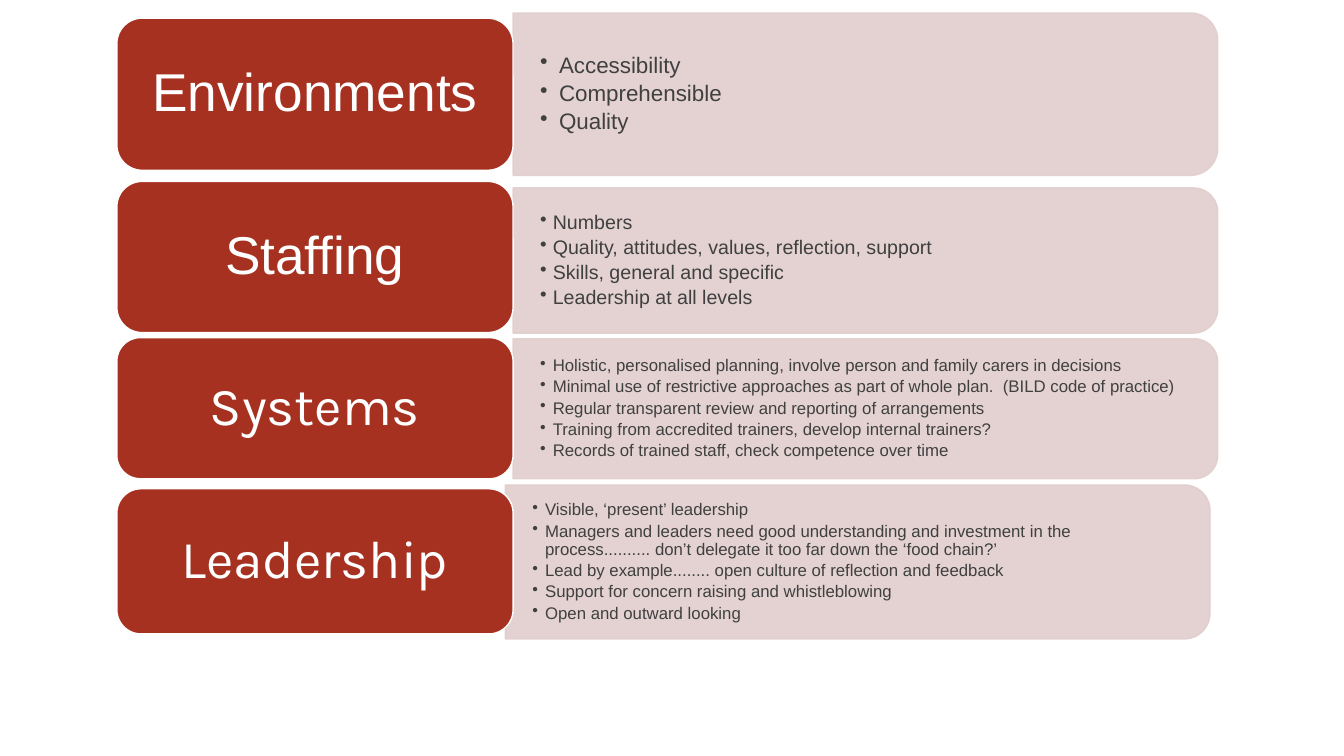
from lxml.etree import SubElement
from pptx import Presentation
from pptx.dml.color import RGBColor
from pptx.enum.shapes import MSO_SHAPE
from pptx.enum.text import MSO_ANCHOR, PP_ALIGN
from pptx.oxml.ns import qn
from pptx.util import Pt

COLOURS = {"label": "A63121", "panel": "E1CECD", "body": "404040", "white": "FFFFFF"}
LABEL_LEFT, LABEL_WIDTH = 83.5, 283
PANEL_WIDTH, TEXT_WIDTH = 503.3, 498

# Each row: label and panel as (centre, height), then the text settings
rows = [
    {"title": "Environments", "title_font": "Arial", "label": (67.3, 108.7),
     "panel": (67.3, 116), "left": 366.5, "size": 16, "indent": 13.5,
     "items": ["Accessibility", "Comprehensible", "Quality"]},
    {"title": "Staffing", "title_font": "Arial", "label": (183.6, 108),
     "panel": (186.1, 103.7), "left": 366.5, "size": 14, "indent": 9,
     "items": ["Numbers",
               "Quality, attitudes, values, reflection, support",
               "Skills, general and specific",
               "Leadership at all levels"]},
    {"title": "Systems", "title_font": "Karla", "label": (291.6, 100.8),
     "panel": (292, 100), "left": 366.5, "size": 12, "indent": 9,
     "items": ["Holistic, personalised planning, involve person and family carers in decisions",
               "Minimal use of restrictive approaches as part of whole plan.  (BILD code of practice)",
               "Regular transparent review and reporting of arrangements",
               "Training from accredited trainers, develop internal trainers?",
               "Records of trained staff, check competence over time"]},
    {"title": "Leadership", "title_font": "Karla", "label": (401, 103.7),
     "panel": (401.4, 110), "left": 361, "size": 12, "indent": 9,
     "items": ["Visible, ‘present’ leadership",
               "Managers and leaders need good understanding and investment in the "
               "process.......... don’t delegate it too far down the ‘food chain?’",
               "Lead by example........ open culture of reflection and feedback",
               "Support for concern raising and whistleblowing",
               "Open and outward looking"]},
]


def paint(shape, fill, line):
    shape.shadow.inherit = False
    shape.fill.solid()
    shape.fill.fore_color.rgb = RGBColor.from_string(COLOURS[fill])
    shape.line.color.rgb = RGBColor.from_string(COLOURS[line])
    shape.line.width = Pt(1)


def write(frame, texts, margins, font, size, colour):
    across, down = margins
    frame_format = {"word_wrap": True, "vertical_anchor": MSO_ANCHOR.MIDDLE,
                    "margin_left": Pt(across), "margin_right": Pt(across),
                    "margin_top": Pt(down), "margin_bottom": Pt(down)}
    for name, value in frame_format.items():
        setattr(frame, name, value)
    for number, text in enumerate(texts):
        para = frame.add_paragraph() if number else frame.paragraphs[0]
        para.line_spacing = 0.9
        span = para.add_run()
        span.text = text
        for name, value in {"name": font, "size": Pt(size)}.items():
            setattr(span.font, name, value)
        span.font.color.rgb = RGBColor.from_string(COLOURS[colour])


deck = Presentation()
deck.slide_width, deck.slide_height = Pt(960), Pt(540)
page = deck.slides.add_slide(deck.slide_layouts[6])

for row in rows:
    # Panel: turned a quarter so that its round corners face right
    centre, height = row["panel"]
    panel = page.shapes.add_shape(
        MSO_SHAPE.ROUND_2_SAME_RECTANGLE,
        Pt(row["left"] + (PANEL_WIDTH - height) / 2), Pt(centre - PANEL_WIDTH / 2),
        Pt(height), Pt(PANEL_WIDTH))
    panel.rotation = 90
    paint(panel, "panel", "panel")
    for tint in panel.element.spPr.iter(qn("a:srgbClr")):
        SubElement(tint, qn("a:alpha"), val="90000")

    # Bulleted list over the panel
    box = page.shapes.add_textbox(Pt(row["left"]), Pt(centre - height / 2),
                                  Pt(TEXT_WIDTH), Pt(height))
    write(box.text_frame, row["items"], (19.4, 10), "Arial", row["size"], "body")
    for para in box.text_frame.paragraphs:
        para.level = 1
        para.space_after = Pt(row["size"] * 0.19)
        properties = para._p.get_or_add_pPr()
        properties.set("marL", str(Pt(row["indent"])))
        properties.set("indent", str(-Pt(row["indent"])))
        SubElement(properties, qn("a:buChar"), char="•")

    # Label
    centre, height = row["label"]
    label = page.shapes.add_shape(MSO_SHAPE.ROUNDED_RECTANGLE,
                                  Pt(LABEL_LEFT), Pt(centre - height / 2),
                                  Pt(LABEL_WIDTH), Pt(height))
    paint(label, "label", "white")
    write(label.text_frame, [row["title"]], (11.5, 5.8), row["title_font"], 38, "white")
    label.text_frame.paragraphs[0].alignment = PP_ALIGN.CENTER

deck.save("out.pptx")
